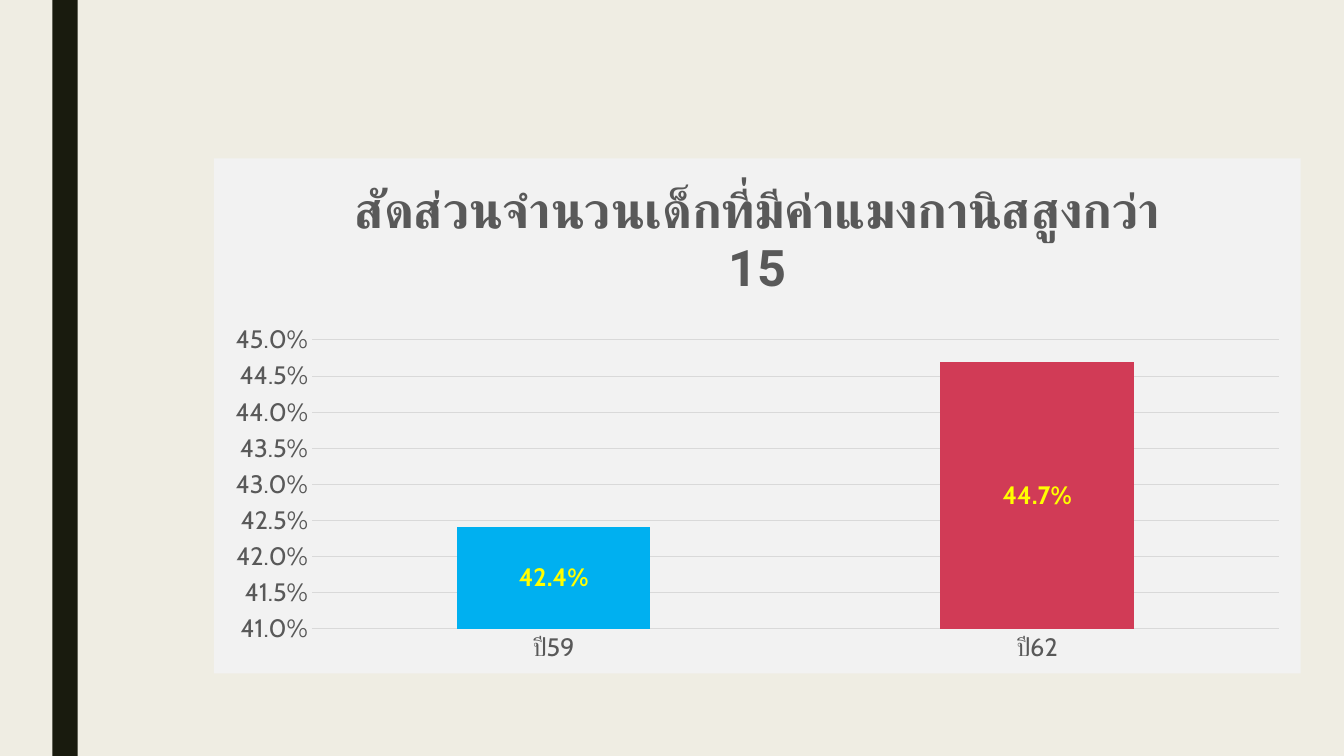
from lxml import etree
from pptx import Presentation
from pptx.chart.data import CategoryChartData
from pptx.dml.color import RGBColor
from pptx.enum.chart import XL_CHART_TYPE as ChartType
from pptx.enum.chart import XL_LABEL_POSITION as LabelPosition
from pptx.enum.chart import XL_TICK_MARK as TickMark
from pptx.enum.shapes import MSO_SHAPE as ShapeType
from pptx.oxml import parse_xml
from pptx.oxml.ns import nsdecls, qn
from pptx.util import Inches, Pt

CREAM = RGBColor(0xEF, 0xED, 0xE3)
DARK_OLIVE = RGBColor(0x19, 0x1B, 0x0E)
PANEL_GRAY = RGBColor(0xF2, 0xF2, 0xF2)
TEXT_GRAY = RGBColor(0x59, 0x59, 0x59)
LINE_GRAY = RGBColor(0xD9, 0xD9, 0xD9)
BLUE = RGBColor(0x00, 0xB0, 0xF0)
RED = RGBColor(0xD1, 0x3B, 0x56)
YELLOW = RGBColor(0xFF, 0xFF, 0x00)
BLACK = RGBColor(0x00, 0x00, 0x00)

PERCENT = "###0.0%"
TITLE = "สัดส่วนจำนวนเด็กที่มีค่าแมงกานิสสูงกว่า 15"
SHARES = {"ปี59": 0.424, "ปี62": 0.447}


def format_font(font, size, color, name="Cabin", bold=False):
    font.size = Pt(size)
    font.color.rgb = color
    font.name = name
    font.bold = bold


def format_line(line, color, width=0.75):
    line.color.rgb = color
    line.width = Pt(width)


def add_side_bar(slide):
    bar = slide.shapes.add_shape(
        ShapeType.RECTANGLE, Inches(0.52), 0, Inches(0.25), Inches(7.5))
    bar.shadow.inherit = False
    bar.fill.solid()
    bar.fill.fore_color.rgb = DARK_OLIVE
    bar.line.fill.background()


def set_title(chart, text, **font_format):
    chart.has_title = True
    chart.chart_title.include_in_layout = False
    paragraph = chart.chart_title.text_frame.paragraphs[0]
    run = paragraph.add_run()
    run.text = text
    format_font(run.font, **font_format)


def fill_chart_area(chart, color):
    properties = parse_xml(f"<c:spPr {nsdecls('c', 'a')}/>")
    fill = etree.SubElement(properties, qn("a:solidFill"))
    etree.SubElement(fill, qn("a:srgbClr"), val=str(color))
    line = etree.SubElement(properties, qn("a:ln"))
    etree.SubElement(line, qn("a:noFill"))
    chart.element.find(qn("c:chart")).addnext(properties)


def format_axes(chart):
    for axis in (chart.category_axis, chart.value_axis):
        axis.major_tick_mark = TickMark.NONE
        axis.minor_tick_mark = TickMark.NONE
        format_font(axis.tick_labels.font, 18, TEXT_GRAY)
    format_line(chart.category_axis.format.line, LINE_GRAY)

    value_axis = chart.value_axis
    value_axis.minimum_scale = 0.41
    value_axis.maximum_scale = 0.45
    value_axis.major_unit = 0.005
    value_axis.tick_labels.number_format = PERCENT
    value_axis.tick_labels.number_format_is_linked = False
    value_axis.format.line.fill.background()
    value_axis.has_major_gridlines = True
    format_line(value_axis.major_gridlines.format.line, LINE_GRAY)


def format_columns(plot):
    plot.gap_width = 150
    plot.overlap = 100
    plot.vary_by_categories = False
    series = plot.series[0]
    for fill, color in ((series.format.fill, RED),
                        (series.points[0].format.fill, BLUE)):
        fill.solid()
        fill.fore_color.rgb = color
    labels = series.data_labels
    labels.show_value = True
    labels.number_format = PERCENT
    labels.number_format_is_linked = False
    labels.position = LabelPosition.CENTER
    format_font(labels.font, 18, YELLOW, bold=True)


def add_share_chart(slide):
    data = CategoryChartData(number_format=PERCENT)
    data.categories = list(SHARES)
    data.add_series("Series 1", list(SHARES.values()))
    chart = slide.shapes.add_chart(
        ChartType.COLUMN_STACKED, Inches(2.12), Inches(1.57),
        Inches(10.78), Inches(5.11), data).chart
    chart.has_legend = False
    format_font(chart.font, 10, BLACK)
    set_title(chart, TITLE, size=36, color=TEXT_GRAY, name="Roboto", bold=True)
    fill_chart_area(chart, PANEL_GRAY)
    format_axes(chart)
    format_columns(chart.plots[0])


def main():
    presentation = Presentation()
    presentation.slide_width = Inches(13.33)
    presentation.slide_height = Inches(7.5)
    slide = presentation.slides.add_slide(presentation.slide_layouts[6])
    slide.background.fill.solid()
    slide.background.fill.fore_color.rgb = CREAM
    add_side_bar(slide)
    add_share_chart(slide)
    presentation.save("out.pptx")


if __name__ == "__main__":
    main()
